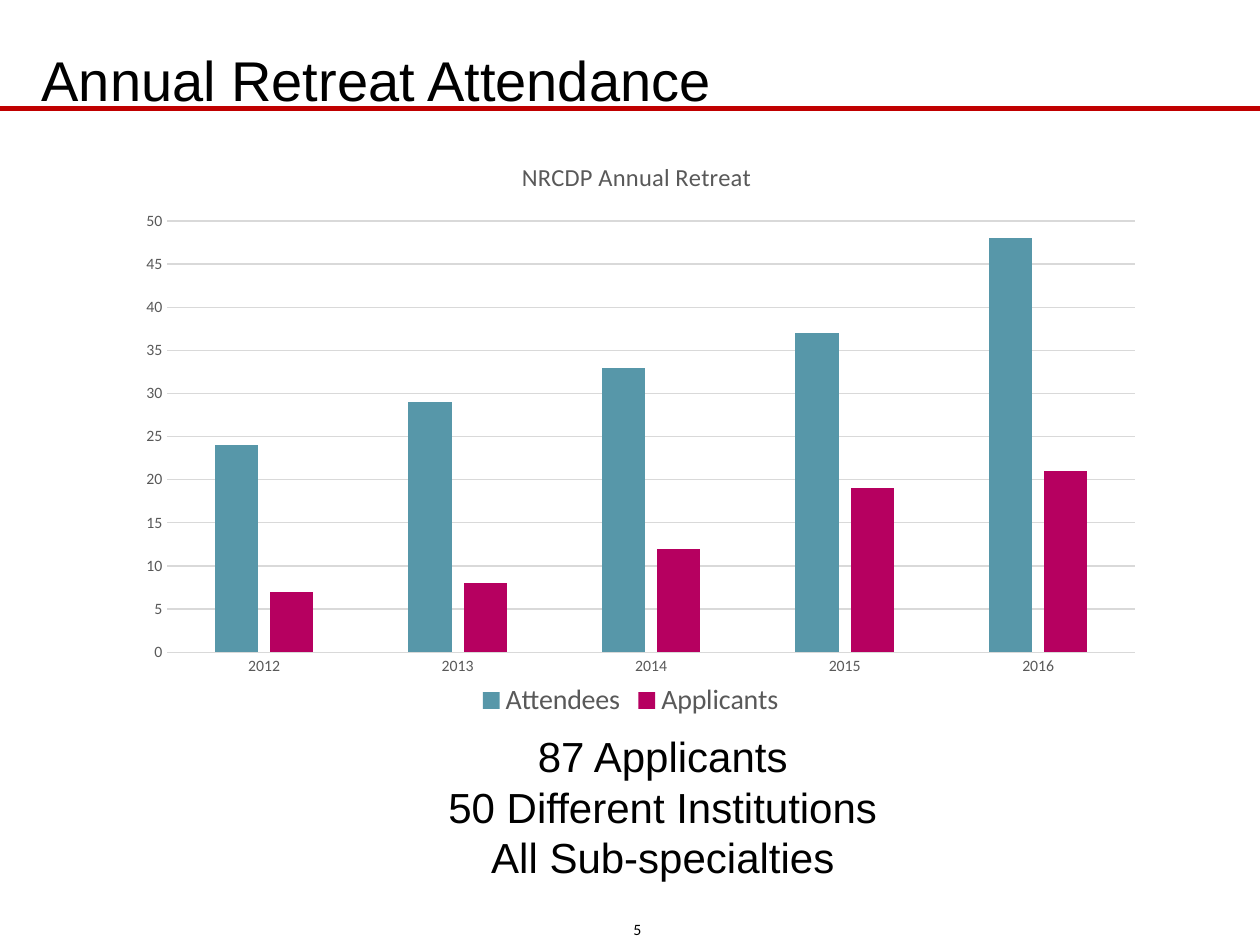
from lxml.etree import SubElement
from pptx import Presentation
from pptx.chart.data import CategoryChartData
from pptx.dml.color import RGBColor
from pptx.enum.chart import XL_CHART_TYPE, XL_LEGEND_POSITION, XL_TICK_MARK
from pptx.enum.shapes import MSO_CONNECTOR
from pptx.enum.text import MSO_ANCHOR, PP_ALIGN
from pptx.oxml import parse_xml
from pptx.oxml.ns import nsdecls, qn
from pptx.util import Inches, Pt


def style_font(font, size, color, name="Calibri"):
    font.size = Pt(size)
    font.name = name
    font.bold = False
    font.color.rgb = RGBColor.from_string(color)


def write_text(text_frame, text, size, name="Arial", color="000000", align=PP_ALIGN.LEFT,
               margins=(0.1, 0.05, 0.1, 0.05), wrap=True, anchor=MSO_ANCHOR.TOP):
    """Fill a text frame, one paragraph per line; margins are left, top, right, bottom."""
    text_frame.text = text
    text_frame.word_wrap = wrap
    text_frame.vertical_anchor = anchor
    (text_frame.margin_left, text_frame.margin_top,
     text_frame.margin_right, text_frame.margin_bottom) = map(Inches, margins)
    for paragraph in text_frame.paragraphs:
        paragraph.alignment = align
        for run in paragraph.runs:
            style_font(run.font, size, color, name)


presentation = Presentation()
presentation.slide_width = Inches(10)
presentation.slide_height = Inches(7.5)
slide = presentation.slides.add_slide(presentation.slide_layouts[5])

# Title
title = slide.shapes.title
title.left, title.top = Inches(0.33), Inches(0)
title.width, title.height = Inches(9), Inches(1.25)
write_text(title.text_frame, "Annual Retreat Attendance", 32,
           margins=(0, 0.05, 0.1, 0.05), anchor=MSO_ANCHOR.MIDDLE)

# Attendance chart
chart_data = CategoryChartData()
chart_data.categories = ["2012", "2013", "2014", "2015", "2016"]
chart_data.add_series("Attendees", [24, 29, 33, 37, 48])
chart_data.add_series("Applicants", [7, 8, 12, 19, 21])
chart = slide.shapes.add_chart(
    XL_CHART_TYPE.COLUMN_CLUSTERED, Inches(0.92), Inches(1.05),
    Inches(8.17), Inches(4.69), chart_data).chart
style_font(chart.font, 10, "000000")

chart.has_title = True
chart.chart_title.text_frame.text = "NRCDP Annual Retreat"
style_font(chart.chart_title.text_frame.paragraphs[0].runs[0].font, 14, "595959")

chart.has_legend = True
chart.legend.position = XL_LEGEND_POSITION.BOTTOM
chart.legend.include_in_layout = False
style_font(chart.legend.font, 16, "595959")

plot = chart.plots[0]
plot.gap_width = 219
plot.overlap = -27
plot.vary_by_categories = False
for series, color in zip(plot.series, ["5797A9", "B60060"]):
    series.format.fill.solid()
    series.format.fill.fore_color.rgb = RGBColor.from_string(color)

category_axis, value_axis = chart.category_axis, chart.value_axis
for axis in (category_axis, value_axis):
    axis.major_tick_mark = axis.minor_tick_mark = XL_TICK_MARK.NONE
    style_font(axis.tick_labels.font, 9, "595959")
value_axis.minimum_scale = 0
value_axis.maximum_scale = 50
value_axis.major_unit = 5
value_axis.format.line.fill.background()
for line in (category_axis.format.line, value_axis.major_gridlines.format.line):
    line.color.rgb = RGBColor.from_string("D9D9D9")
    line.width = Pt(0.75)

# Fixed places of the chart title and the plot area, as fractions of the chart
chart_element = chart._chartSpace.chart
placements = [
    (chart_element.find(qn("c:title")), 1,
     {"xMode": "edge", "yMode": "edge", "x": 0.39, "y": 0.04}),
    (chart_element.plotArea, 0,
     {"layoutTarget": "inner", "xMode": "edge", "yMode": "edge",
      "x": 0.05, "y": 0.15, "w": 0.94, "h": 0.73}),
]
for element, position, settings in placements:
    for old_layout in element.findall(qn("c:layout")):
        element.remove(old_layout)
    layout = parse_xml(f"<c:layout {nsdecls('c')}><c:manualLayout/></c:layout>")
    for tag, value in settings.items():
        SubElement(layout[0], qn(f"c:{tag}")).set("val", str(value))
    element.insert(position, layout)

# Summary and slide number
summary = slide.shapes.add_textbox(Inches(3.12), Inches(5.75), Inches(4.28), Inches(1.31))
write_text(summary.text_frame, "87 Applicants\n50 Different Institutions\nAll Sub-specialties",
           24, align=PP_ALIGN.CENTER)
slide_number = slide.shapes.add_textbox(Inches(4.9), Inches(7.3), Inches(0.19), Inches(0.14))
write_text(slide_number.text_frame, "5", 9, name="Calibri", align=PP_ALIGN.RIGHT,
           margins=(0, 0, 0, 0), wrap=False)

# Rule under the title
rule = slide.shapes.add_connector(
    MSO_CONNECTOR.STRAIGHT, Inches(0), Inches(0.86), Inches(10), Inches(0.86))
rule.line.color.rgb = RGBColor.from_string("C00000")
rule.line.width = Pt(3)
SubElement(rule._element.spPr, qn("a:effectLst"))

presentation.save("out.pptx")
